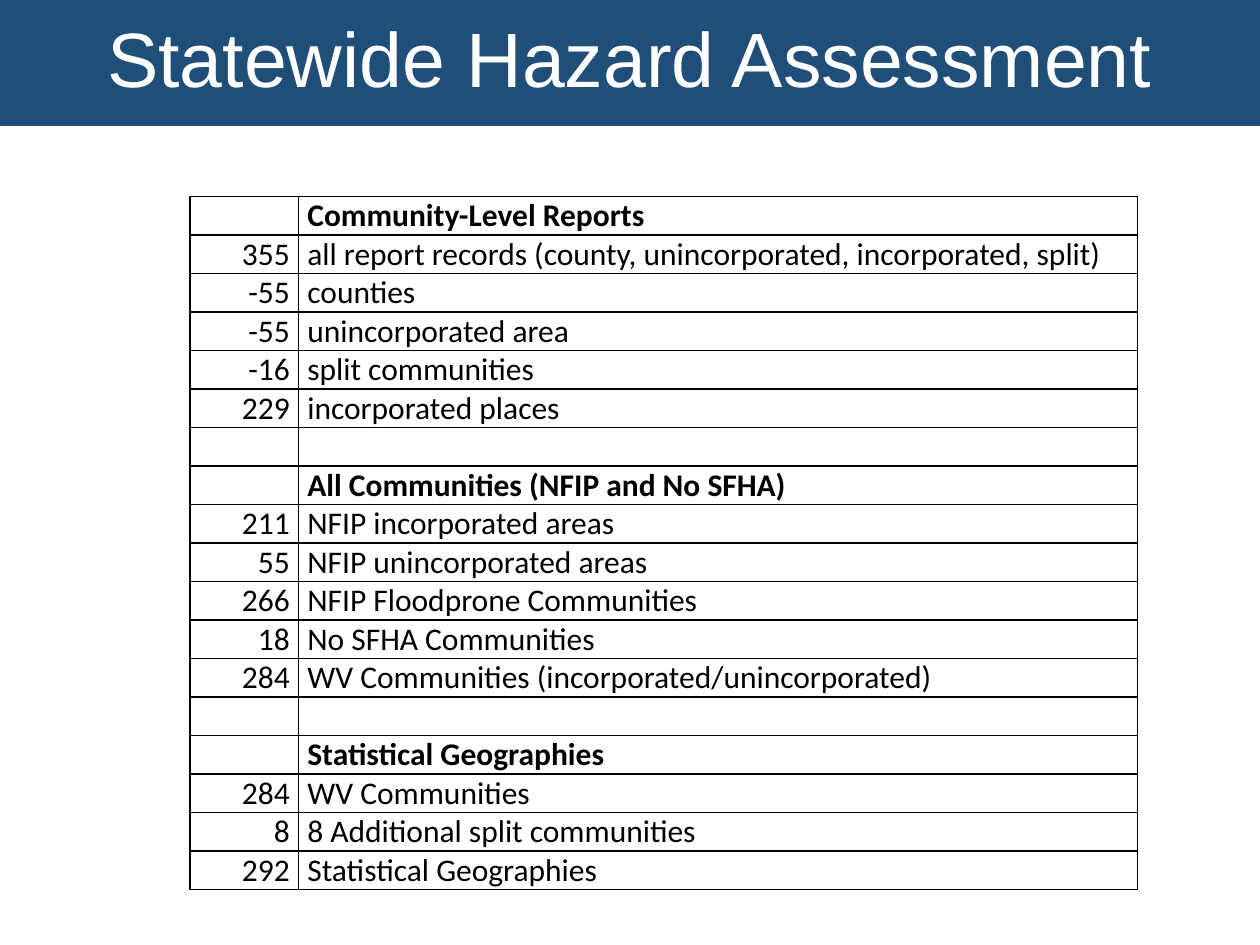
from lxml import etree
from pptx import Presentation
from pptx import util as u
from pptx.dml.color import RGBColor
from pptx.enum import shapes, text
from pptx.oxml import ns

NAVY = RGBColor(0x1F, 0x4E, 0x79)
WHITE = RGBColor(0xFF, 0xFF, 0xFF)
BLACK = RGBColor(0, 0, 0)
WIDTH, HEIGHT = u.Inches(10), u.Inches(7.5)
COLUMNS = (u.Inches(0.86), u.Inches(6.66))
ROW_HEIGHT = u.Inches(0.3)
SECTIONS = (
    ("Community-Level Reports", (
        ("355", "all report records (county, unincorporated, incorporated, split)"),
        ("-55", "counties"),
        ("-55", "unincorporated area"),
        ("-16", "split communities"),
        ("229", "incorporated places"),
    )),
    ("All Communities (NFIP and No SFHA)", (
        ("211", "NFIP incorporated areas"),
        ("55", "NFIP unincorporated areas"),
        ("266", "NFIP Floodprone Communities"),
        ("18", "No SFHA Communities"),
        ("284", "WV Communities (incorporated/unincorporated)"),
    )),
    ("Statistical Geographies", (
        ("284", "WV Communities"),
        ("8", "8 Additional split communities"),
        ("292", "Statistical Geographies"),
    )),
)


def set_font(para, name, size, color, bold=False):
    """Set the font of a whole paragraph."""
    font = para.font
    font.name, font.size, font.bold = name, u.Pt(size), bold
    font.color.rgb = color


def add_banner(page, title):
    """Add the title band across the top of the page."""
    band = page.shapes.add_shape(
        shapes.MSO_SHAPE.RECTANGLE, 0, 0, WIDTH, u.Inches(1))
    band.shadow.inherit = False
    band.fill.solid()
    band.fill.fore_color.rgb = NAVY
    band.line.fill.background()
    frame = band.text_frame
    frame.word_wrap = True
    frame.vertical_anchor = text.MSO_ANCHOR.MIDDLE
    para = frame.paragraphs[0]
    para.text = title
    para.alignment = text.PP_ALIGN.CENTER
    para.line_spacing = 0.9
    set_font(para, "Arial", 44, WHITE)


def add_borders(cell):
    """Draw a thin black line on all four sides of a cell."""
    properties = cell._tc.get_or_add_tcPr()
    for index, side in enumerate(("lnL", "lnR", "lnT", "lnB")):
        line = etree.Element(ns.qn("a:" + side), w=str(u.Pt(1)))
        fill = etree.SubElement(line, ns.qn("a:solidFill"))
        etree.SubElement(fill, ns.qn("a:srgbClr"), val=str(BLACK))
        properties.insert(index, line)


def fill_cell(cell, content, alignment, bold):
    """Write and format one table cell."""
    cell.margin_left = cell.margin_right = u.Inches(0.07)
    cell.margin_top = cell.margin_bottom = 0
    cell.vertical_anchor = text.MSO_ANCHOR.BOTTOM
    cell.fill.background()
    add_borders(cell)
    para = cell.text_frame.paragraphs[0]
    para.text = content
    para.alignment = alignment
    set_font(para, "Calibri", 18, BLACK, bold)


def list_rows():
    """Return count, label and bold flag per row, with a gap between sections."""
    rows = []
    for heading, entries in SECTIONS:
        if rows:
            rows.append(("", "", False))
        rows.append(("", heading, True))
        rows.extend((count, label, False) for count, label in entries)
    return rows


def add_counts(page):
    """Add the table of community counts."""
    rows = list_rows()
    table = page.shapes.add_table(
        len(rows), len(COLUMNS), u.Inches(1.51), u.Inches(1.56),
        sum(COLUMNS), ROW_HEIGHT * len(rows)).table
    table.first_row = table.horz_banding = False
    for column, width in zip(table.columns, COLUMNS):
        column.width = width
    for row, (count, label, bold) in zip(table.rows, rows):
        row.height = ROW_HEIGHT
        fill_cell(row.cells[0], count, text.PP_ALIGN.RIGHT, bold)
        fill_cell(row.cells[1], label, text.PP_ALIGN.LEFT, bold)


def main():
    """Build and save the slide."""
    deck = Presentation()
    deck.slide_width, deck.slide_height = WIDTH, HEIGHT
    page = deck.slides.add_slide(deck.slide_layouts[6])
    add_banner(page, "Statewide Hazard Assessment")
    add_counts(page)
    deck.save("out.pptx")


if __name__ == "__main__":
    main()
